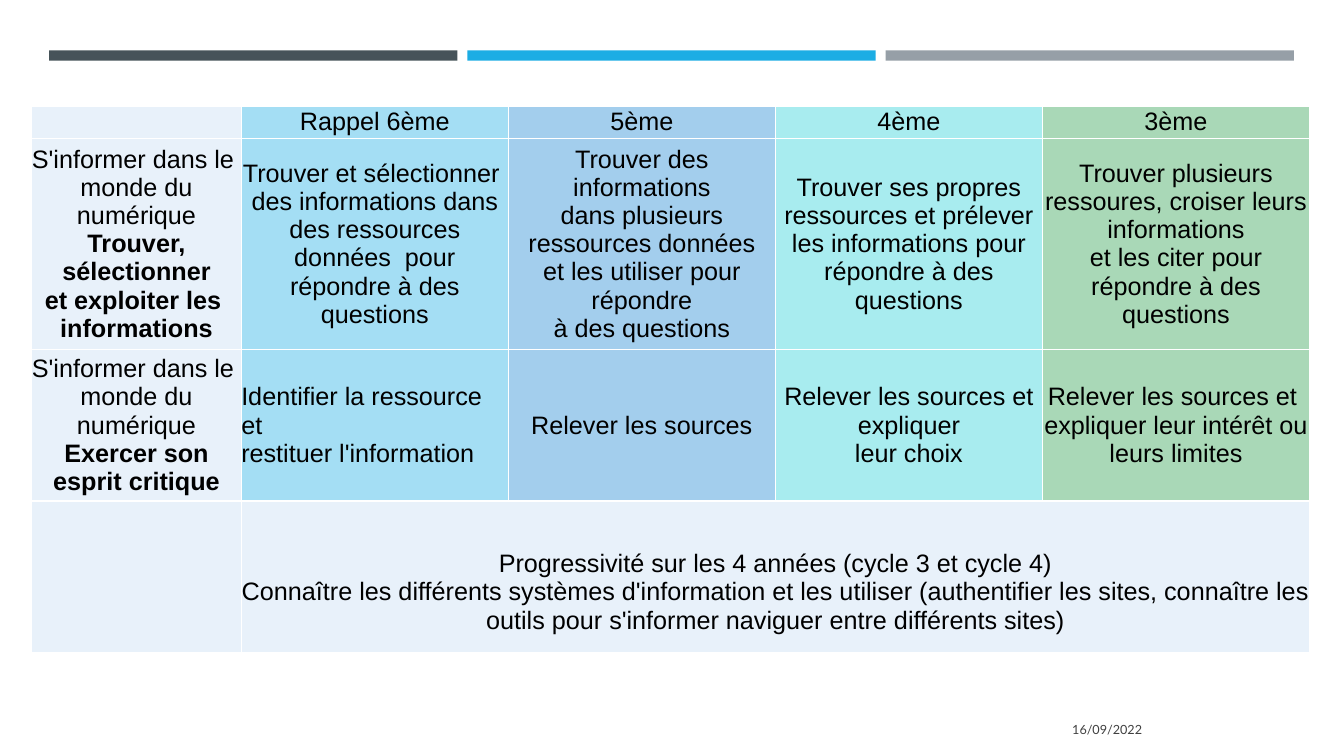
from dataclasses import dataclass

from lxml.etree import SubElement
from pptx import Presentation
from pptx.dml.color import RGBColor as RGB
from pptx.enum.shapes import MSO_SHAPE as SHAPE
from pptx.enum.text import MSO_ANCHOR as ANCHOR, PP_ALIGN as ALIGN
from pptx.oxml.ns import qn
from pptx.util import Cm, Pt


@dataclass(frozen=True)
class Theme:
    bars: tuple = ("465359", "1CADE4", "969FA7")
    columns: tuple = ("E8F1FA", "A4DEF4", "A3CEED", "A8ECEF", "A9D8B7")
    border: str = "FFFFFF"
    text: str = "000000"
    muted: str = "404040"
    table_font: str = "Arial"
    date_font: str = "Lato"
    table_size: int = 18
    date_size: int = 9


class SlideBuilder:
    def __init__(self, prs, theme):
        self.theme = theme
        self.s = prs.slides.add_slide(prs.slide_layouts[6])

    def style(self, r, font, size, color, bold=False):
        r.font.name, r.font.size, r.font.bold = font, Pt(size), bold
        r.font.color.rgb = RGB.from_string(color)

    def bar(self, x, y, w, h, color):
        sp = self.s.shapes.add_shape(SHAPE.RECTANGLE, Cm(x), Cm(y), Cm(w), Cm(h))
        sp.shadow.inherit = False
        sp.fill.solid()
        sp.fill.fore_color.rgb = RGB.from_string(color)
        sp.line.fill.background()

    def date(self, x, y, w, h, text):
        tf = self.s.shapes.add_textbox(Cm(x), Cm(y), Cm(w), Cm(h)).text_frame
        tf.word_wrap = True
        tf.vertical_anchor = ANCHOR.MIDDLE
        tf.text = text
        p = tf.paragraphs[0]
        p.alignment = ALIGN.RIGHT
        t = self.theme
        self.style(p.runs[0], t.date_font, t.date_size, t.muted)

    def borders(self, cell):
        tc_pr = cell._tc.get_or_add_tcPr()
        for i, side in enumerate(("lnL", "lnR", "lnT", "lnB")):
            ln = SubElement(tc_pr, qn(f"a:{side}"), w=str(Pt(1)))
            fill = SubElement(ln, qn("a:solidFill"))
            SubElement(fill, qn("a:srgbClr"), val=self.theme.border)
            tc_pr.insert(i, ln)

    def cell(self, cell, plain, bold, color, align):
        t = self.theme
        cell.margin_left = cell.margin_right = cell.margin_top = cell.margin_bottom = 0
        cell.vertical_anchor = ANCHOR.MIDDLE
        cell.fill.solid()
        cell.fill.fore_color.rgb = RGB.from_string(color)
        self.borders(cell)
        p = cell.text_frame.paragraphs[0]
        # A newline in the content is a line break inside the paragraph
        p.text = (plain + bold).replace("\n", "\v")
        p.alignment = align
        for i, r in enumerate(p.runs):
            is_bold = bool(bold) and i >= plain.count("\n")
            self.style(r, t.table_font, t.table_size, t.text, is_bold)

    def table(self, x, y, widths, heights, rows, left_cells):
        frame = self.s.shapes.add_table(len(rows), len(widths), Cm(x), Cm(y),
                                        Cm(sum(widths)), Cm(sum(heights)))
        table = frame.table
        for column, w in zip(table.columns, widths):
            column.width = Cm(w)
        for row, h in zip(table.rows, heights):
            row.height = Cm(h)
        for i, row in enumerate(rows):
            for j, color in enumerate(self.theme.columns):
                content = row[j] if j < len(row) else ""
                plain, bold = content if isinstance(content, tuple) else (content, "")
                # A short row is a summary in the label colour
                color = color if len(row) == len(widths) else self.theme.columns[0]
                align = ALIGN.LEFT if (i, j) in left_cells else ALIGN.CENTER
                self.cell(table.cell(i, j), plain, bold, color, align)
            if len(row) < len(widths):
                table.cell(i, len(row) - 1).merge(table.cell(i, len(widths) - 1))


SKILL = "S'informer dans le \nmonde du numérique\n"
ROWS = [
    ["", "Rappel 6ème", "5ème", "4ème", "3ème"],
    [
        (SKILL, "Trouver, sélectionner\net exploiter les \ninformations"),
        "Trouver et sélectionner \ndes informations dans des ressources "
        "données  pour répondre à des questions",
        "Trouver des informations\ndans plusieurs ressources données\n"
        "et les utiliser pour répondre\nà des questions",
        "Trouver ses propres\nressources et prélever\n"
        "les informations pour répondre à des questions",
        "Trouver plusieurs ressoures, croiser leurs informations\n"
        "et les citer pour répondre à des questions",
    ],
    [
        (SKILL, "Exercer son esprit critique"),
        "Identifier la ressource et\nrestituer l'information",
        "Relever les sources",
        "Relever les sources et expliquer\nleur choix",
        "Relever les sources et \nexpliquer leur intérêt ou leurs limites",
    ],
    [
        "",
        "\nProgressivité sur les 4 années (cycle 3 et cycle 4)\n"
        "Connaître les différents systèmes d'information et les utiliser "
        "(authentifier les sites, connaître les outils pour s'informer "
        "naviguer entre différents sites)",
    ],
]


def main():
    prs = Presentation()
    prs.slide_width, prs.slide_height = Cm(33.87), Cm(19.05)
    theme = Theme()
    slide = SlideBuilder(prs, theme)

    # Top bars
    for i, color in enumerate(theme.bars):
        slide.bar(1.24 + i * 10.54, 1.27, 10.29, 0.26, color)

    # Date
    slide.date(21.13, 17.86, 7.9, 1.02, "16/09/2022")

    # Progression table
    slide.table(0.8, 2.67, [5.28] + [6.73] * 4, [0.81, 5.13, 3.68, 3.81],
                ROWS, left_cells={(2, 1)})

    prs.save("out.pptx")


if __name__ == "__main__":
    main()
